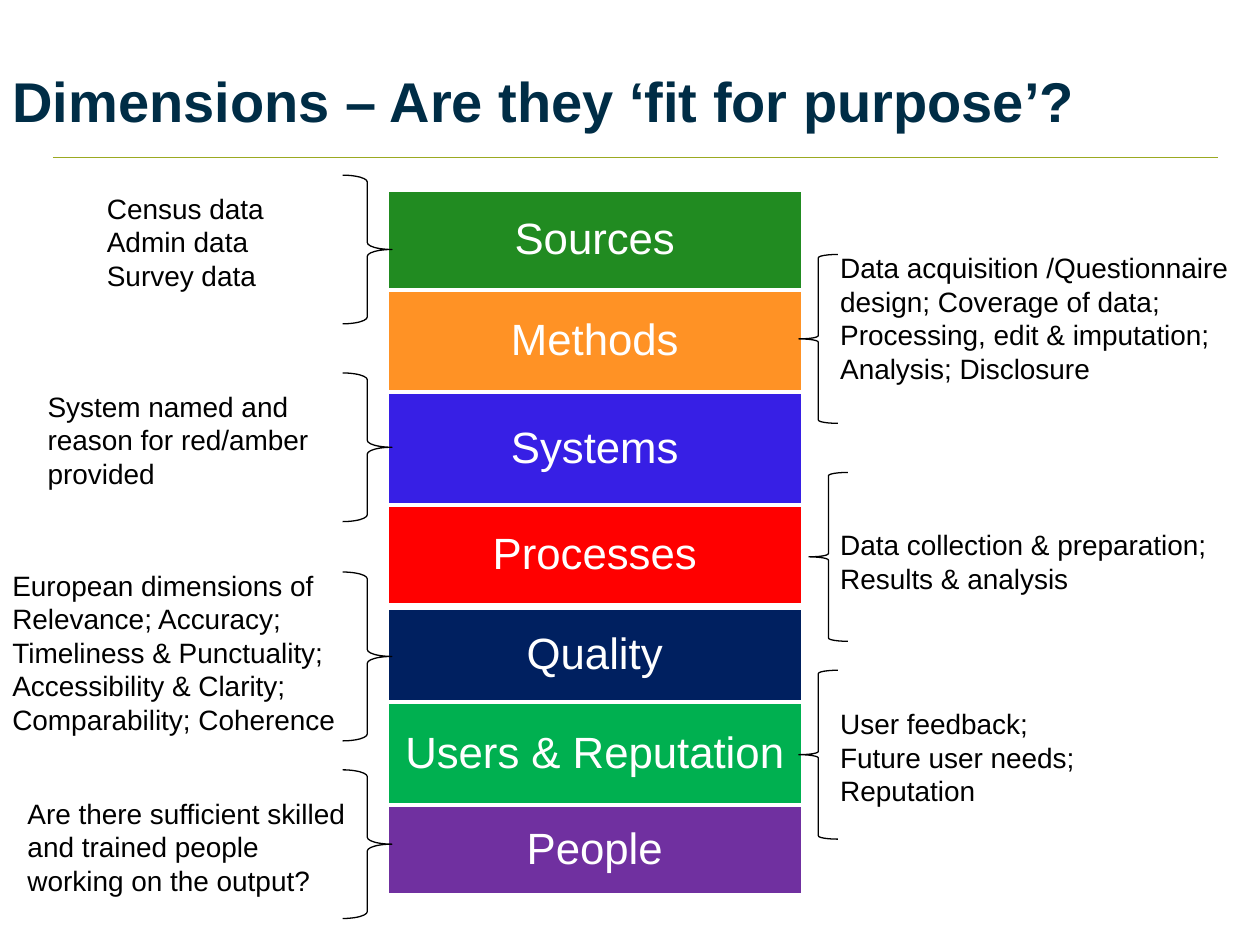
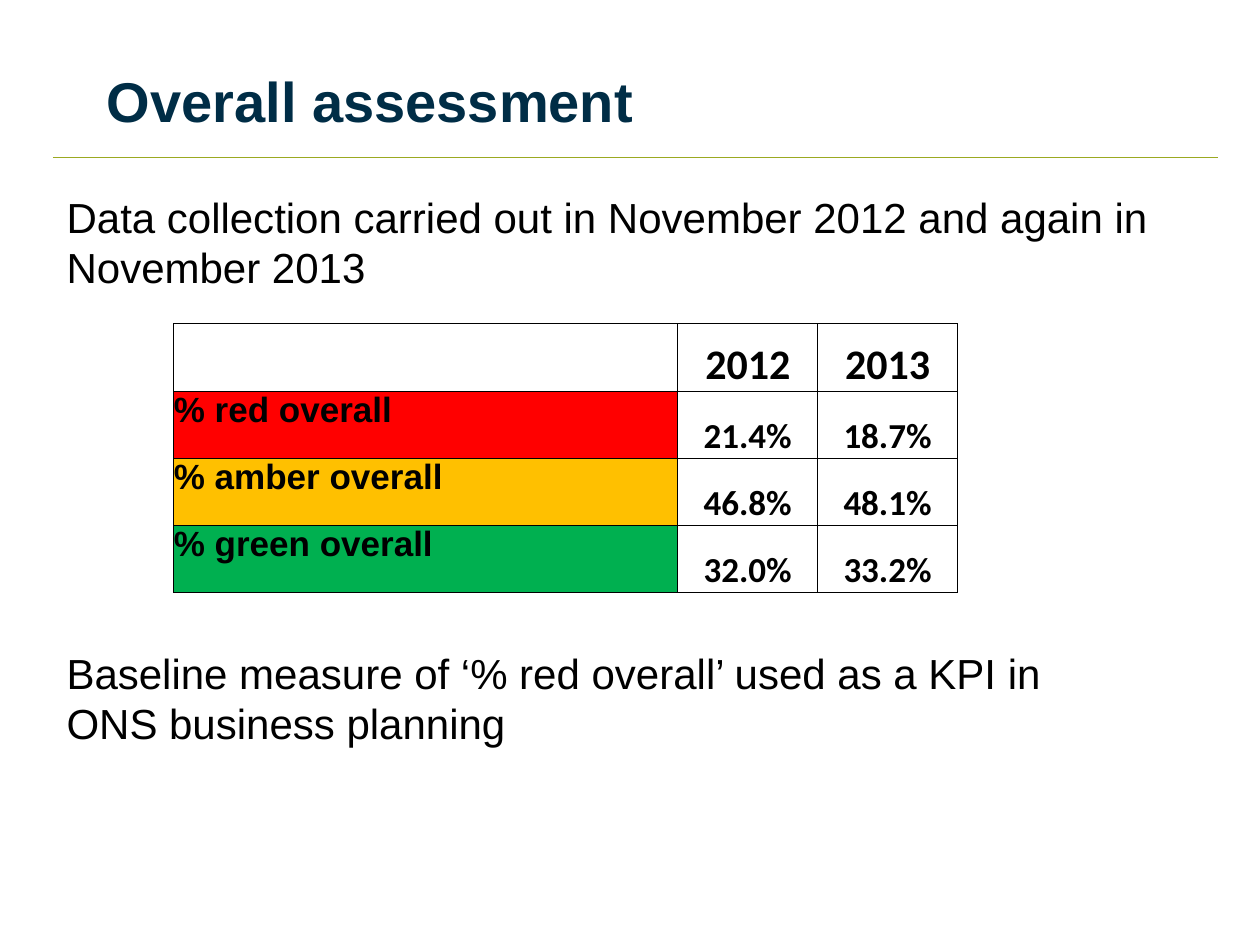
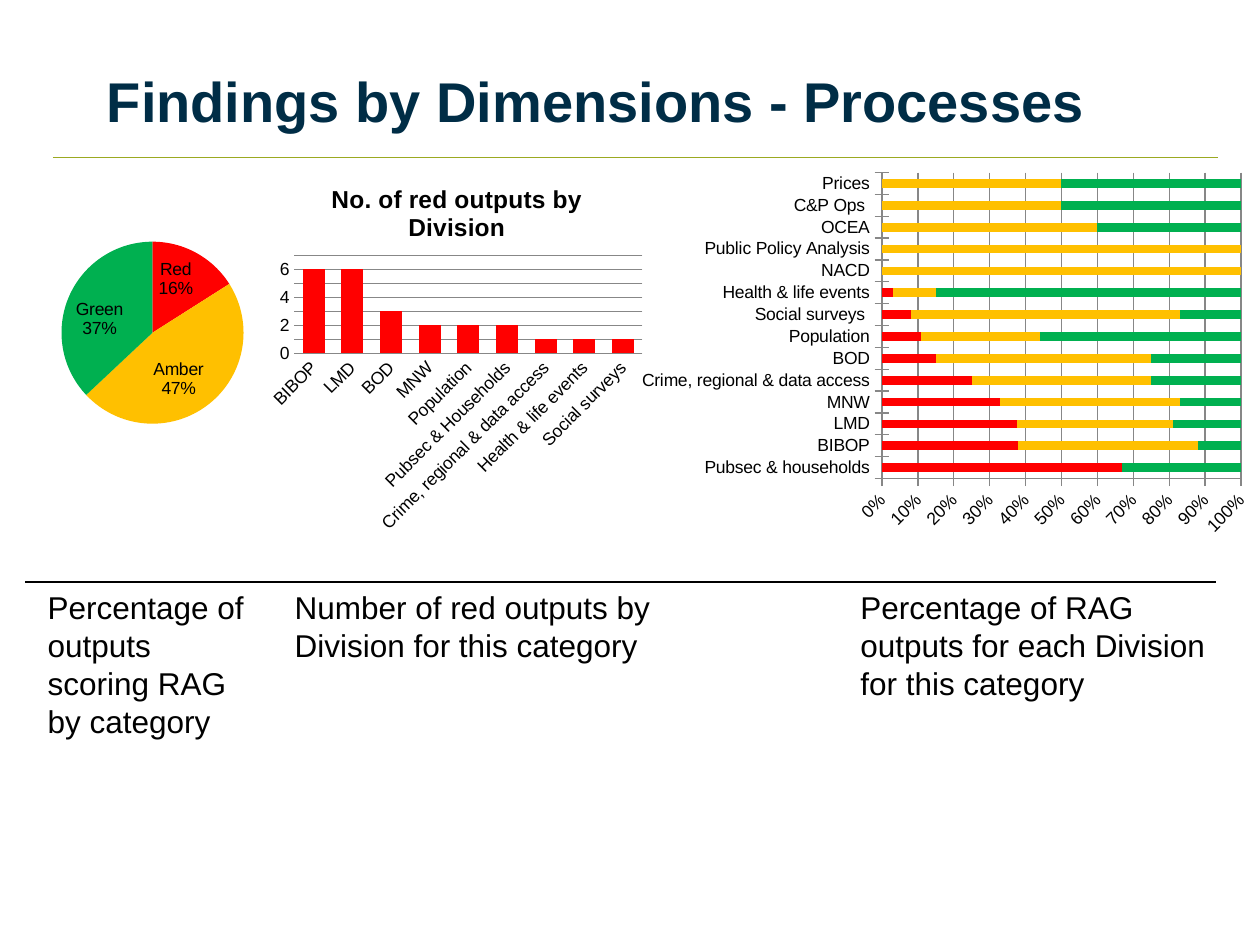
from lxml import etree
from pptx import Presentation
from pptx.chart.data import CategoryChartData
from pptx.dml.color import RGBColor
from pptx.enum.chart import XL_CHART_TYPE, XL_LABEL_POSITION, XL_TICK_MARK
from pptx.enum.shapes import MSO_CONNECTOR, MSO_SHAPE
from pptx.enum.text import MSO_ANCHOR, PP_ALIGN
from pptx.oxml.ns import qn
from pptx.util import Inches, Pt

FONT = "Arial"
BLACK, WHITE, GREY = "000000", "FFFFFF", "878787"
TITLE_BLUE, RULE_GREEN = "002D46", "9BA921"
RED, AMBER, GREEN = "FF0000", "FFC000", "00B050"
rgb = RGBColor.from_string


def add_text(slide, text, frame, size, color=BLACK, bold=False, anchor=MSO_ANCHOR.TOP):
    """Add a wrapped text box; each line of text becomes a paragraph."""
    text_frame = slide.shapes.add_textbox(*map(Inches, frame)).text_frame
    text_frame.word_wrap = True
    text_frame.vertical_anchor = anchor
    text_frame.text = text
    for paragraph in text_frame.paragraphs:
        paragraph.font.name = FONT
        paragraph.font.size = Pt(size)
        paragraph.font.bold = bold
        paragraph.font.color.rgb = rgb(color)


def add_rule(slide, left, right, y, color):
    rule = slide.shapes.add_connector(
        MSO_CONNECTOR.STRAIGHT, Inches(left), Inches(y), Inches(right), Inches(y))
    rule.line.color.rgb = rgb(color)
    rule.line.width = Pt(0.75)
    etree.SubElement(rule._element.spPr, qn("a:effectLst"))


prs = Presentation()
prs.slide_width, prs.slide_height = Inches(10), Inches(7.5)

slides = []
for title, left, width in [
    ("Dimensions – Are they ‘fit for purpose’?", 0, 10),
    ("Overall assessment", 0.75, 8.5),
    ("Findings by Dimensions - Processes", 0.75, 8.5),
]:
    slide = prs.slides.add_slide(prs.slide_layouts[6])
    add_rule(slide, 0.42, 9.67, 1.25, RULE_GREEN)
    add_text(slide, title, (left, 0.17, width, 1.25), 32, TITLE_BLUE, True, MSO_ANCHOR.MIDDLE)
    slides.append(slide)
dimensions, assessment, findings = slides

# Dimensions: stack of bands, braces and explanations
for name, top, height, color in [
    ("Sources", 1.51, 0.79, "218B21"),
    ("Methods", 2.3, 0.82, "FF9225"),
    ("Systems", 3.11, 0.91, "371FE5"),
    ("Processes", 4.01, 0.79, RED),
    ("Quality", 4.83, 0.74, "002060"),
    ("Users & Reputation", 5.57, 0.84, GREEN),
    ("People", 6.39, 0.71, "7030A0"),
]:
    band = dimensions.shapes.add_shape(
        MSO_SHAPE.RECTANGLE, Inches(3.07), Inches(top), Inches(3.3), Inches(height))
    band.shadow.inherit = False
    band.fill.solid()
    band.fill.fore_color.rgb = rgb(color)
    band.line.color.rgb = rgb(WHITE)
    band.line.width = Pt(2)
    band.text_frame.vertical_anchor = MSO_ANCHOR.MIDDLE
    band.text_frame.text = name
    label = band.text_frame.paragraphs[0]
    label.alignment = PP_ALIGN.CENTER
    label.line_spacing = 0.9
    label.font.name = FONT
    label.font.size = Pt(25)
    label.font.color.rgb = rgb(WHITE)

right_brace, left_brace = MSO_SHAPE.RIGHT_BRACE, MSO_SHAPE.LEFT_BRACE
for brace_type, brace_frame, text, text_frame in [
    (right_brace, (2.72, 1.39, 0.39, 1.18),
     "Census data\nAdmin data\nSurvey data", (0.75, 1.47, 1.89, 0.91)),
    (right_brace, (2.72, 2.96, 0.39, 1.18),
     "System named and reason for red/amber provided", (0.28, 3.04, 2.44, 0.91)),
    (right_brace, (2.72, 4.54, 0.39, 1.34),
     "European dimensions of Relevance; Accuracy; Timeliness & Punctuality; "
     "Accessibility & Clarity; Comparability; Coherence", (0, 4.46, 2.8, 1.45)),
    (right_brace, (2.72, 6.11, 0.39, 1.18),
     "Are there sufficient skilled and trained people working on the output?",
     (0.12, 6.27, 2.76, 0.91)),
    (left_brace, (6.34, 2.02, 0.31, 1.34),
     "Data acquisition /Questionnaire design; Coverage of data; "
     "Processing, edit & imputation; Analysis; Disclosure", (6.57, 1.94, 3.43, 1.18)),
    (left_brace, (6.42, 3.75, 0.31, 1.34),
     "Data collection & preparation; Results & analysis", (6.57, 4.14, 3.43, 0.64)),
    (left_brace, (6.34, 5.32, 0.31, 1.34),
     "User feedback;\nFuture user needs;\nReputation", (6.57, 5.56, 3.43, 0.91)),
]:
    brace = dimensions.shapes.add_shape(brace_type, *map(Inches, brace_frame))
    brace.shadow.inherit = False
    brace.fill.background()
    brace.line.color.rgb = rgb(BLACK)
    brace.line.width = Pt(0.75)
    if brace_type == right_brace:
        brace.adjustments[0] = 0.14
    add_text(dimensions, text, text_frame, 16)

# Overall assessment: results table between two statements
add_text(assessment, "Data collection carried out in November 2012 and again in November 2013",
         (0.43, 1.47, 8.82, 0.91), 24)
add_text(assessment, "Baseline measure of ‘% red overall’ used as a KPI in ONS business planning",
         (0.43, 5.09, 8.66, 0.91), 24)

results = [
    ("", "2012", "2013", WHITE),
    ("% red overall", "21.4%", "18.7%", RED),
    ("% amber overall", "46.8%", "48.1%", AMBER),
    ("% green overall", "32.0%", "33.2%", GREEN),
]
table = assessment.shapes.add_table(
    4, 3, Inches(1.38), Inches(2.57), Inches(6.22), Inches(2.13)).table
table.first_row = table.horz_banding = False
for column, width in zip(table.columns, (4, 1.11, 1.11)):
    column.width = Inches(width)
for r, (*values, color) in enumerate(results):
    for c, value in enumerate(values):
        cell = table.cell(r, c)
        cell.margin_left = cell.margin_right = cell.margin_top = cell.margin_bottom = 0
        cell.vertical_anchor = MSO_ANCHOR.BOTTOM if c else MSO_ANCHOR.TOP
        for side in ("lnL", "lnR", "lnT", "lnB"):
            border = etree.SubElement(cell._tc.get_or_add_tcPr(), qn(f"a:{side}"), w=str(Pt(0.5)))
            border_fill = etree.SubElement(border, qn("a:solidFill"))
            etree.SubElement(border_fill, qn("a:srgbClr"), val=BLACK)
        cell.fill.solid()
        cell.fill.fore_color.rgb = rgb(WHITE if c else color)
        cell.text = value
        entry = cell.text_frame.paragraphs[0]
        entry.alignment = PP_ALIGN.CENTER if c else PP_ALIGN.LEFT
        entry.font.name = "Calibri" if c else FONT
        entry.font.size = Pt(20 if r else 24)
        entry.font.bold = True
        entry.font.color.rgb = rgb(BLACK)

# Findings: three charts with captions; each plot area is x, y, w, h as shares of its chart
charts = []
for chart_type, frame, plot_area, categories, series_values in [
    (XL_CHART_TYPE.PIE, (-0.35, 1.47, 2.89, 2.44), (0.29, 0.18, 0.5, 0.6),
     ["Red", "Amber", "Green"], [(16, 47, 37)]),
    (XL_CHART_TYPE.COLUMN_CLUSTERED, (2.09, 1.31, 3.07, 2.99), (0.08, 0.24, 0.9, 0.26),
     ["BIBOP", "LMD", "BOD", "MNW", "Population", "Pubsec & Households",
      "Crime, regional & data access", "Health & life events", "Social surveys"],
     [(6, 6, 3, 2, 2, 2, 1, 1, 1)]),
    (XL_CHART_TYPE.BAR_STACKED_100, (5, 1.31, 5, 3), (0.4, 0.02, 0.57, 0.81),
     ["Pubsec & households", "BIBOP", "LMD", "MNW", "Crime, regional & data access",
      "BOD", "Population", "Social surveys ", "Health & life events", "NACD",
      "Public Policy Analysis", "OCEA", "C&P Ops ", "Prices"],
     [(67, 38, 38, 33, 25, 15, 11, 8, 3, 0, 0, 0, 0, 0),
      (0, 50, 44, 50, 50, 60, 33, 75, 12, 100, 100, 60, 50, 50),
      (33, 12, 19, 17, 25, 25, 56, 17, 84, 0, 0, 40, 50, 50)]),
]:
    data = CategoryChartData()
    data.categories = categories
    for number, values in enumerate(series_values, 1):
        data.add_series(f"Series {number}", values)
    chart = findings.shapes.add_chart(chart_type, *map(Inches, frame), data).chart
    chart.has_legend = chart.has_title = False
    chart.font.name = FONT
    chart.font.size = Pt(10)
    chart.font.color.rgb = rgb(BLACK)

    area = chart._chartSpace.chart.plotArea
    for automatic in area.findall(qn("c:layout")):
        area.remove(automatic)
    layout = etree.Element(qn("c:layout"))
    area.insert(0, layout)
    manual = etree.SubElement(layout, qn("c:manualLayout"))
    settings = ["inner", "edge", "edge", *map(str, plot_area)]
    for tag, value in zip(("layoutTarget", "xMode", "yMode", "x", "y", "w", "h"), settings):
        etree.SubElement(manual, qn(f"c:{tag}"), val=value)
    charts.append(chart)
pie, red_columns, division_bars = charts

pie_plot = pie.plots[0]
for index, color in enumerate((RED, AMBER, GREEN)):
    slice_fill = pie_plot.series[0].points[index].format.fill
    slice_fill.solid()
    slice_fill.fore_color.rgb = rgb(color)
pie_plot.has_data_labels = True
shares = pie_plot.data_labels
shares.show_category_name = shares.show_percentage = True
shares.show_value = False
shares.position = XL_LABEL_POSITION.INSIDE_END
separator = etree.Element(qn("c:separator"))
separator.text = "\n"
shares._element.find(qn("c:showBubbleSize")).addnext(separator)

for chart, gap, overlap, tick in [
    (red_columns, 75, -25, XL_TICK_MARK.NONE),
    (division_bars, 150, 100, XL_TICK_MARK.CROSS),
]:
    plot = chart.plots[0]
    plot.vary_by_categories = False
    plot.gap_width, plot.overlap = gap, overlap
    for series, color in zip(plot.series, (RED, AMBER, GREEN)):
        series.format.fill.solid()
        series.format.fill.fore_color.rgb = rgb(color)
    for axis in (chart.category_axis, chart.value_axis):
        axis.major_tick_mark = tick
        axis.minor_tick_mark = XL_TICK_MARK.NONE
        axis.format.line.color.rgb = rgb(GREY)
        axis.tick_labels.font.size = Pt(10)
    chart.value_axis.has_major_gridlines = True
    chart.value_axis.major_gridlines.format.line.color.rgb = rgb(GREY)
for slanted_axis in (red_columns.category_axis, division_bars.value_axis):
    slanted_axis._element.txPr.bodyPr.set("rot", "-2700000")

red_columns.value_axis.format.line.fill.background()
red_columns.value_axis.minimum_scale, red_columns.value_axis.maximum_scale = 0, 7
red_columns.value_axis.major_unit = 1
red_columns.chart_title.text_frame.text = "No. of red outputs by Division"
heading = red_columns.chart_title.text_frame.paragraphs[0]
heading.font.name = FONT
heading.font.size = Pt(14)
heading.font.bold = True
heading.font.color.rgb = rgb(BLACK)

division_bars.value_axis.major_unit = 0.1
division_bars.value_axis.tick_labels.number_format = "0%"
division_bars.value_axis.tick_labels.number_format_is_linked = False

for caption, left, width, height in [
    ("Percentage of outputs scoring RAG by category", 0.28, 1.81, 1.31),
    ("Number of red outputs by Division for this category", 2.24, 3.07, 0.71),
    ("Percentage of RAG outputs for each Division for this category", 6.73, 3.07, 1.01),
]:
    add_text(findings, caption, (left, 4.62, width, height), 18)
add_rule(findings, 0.2, 9.65, 4.62, BLACK)

prs.save("out.pptx")
